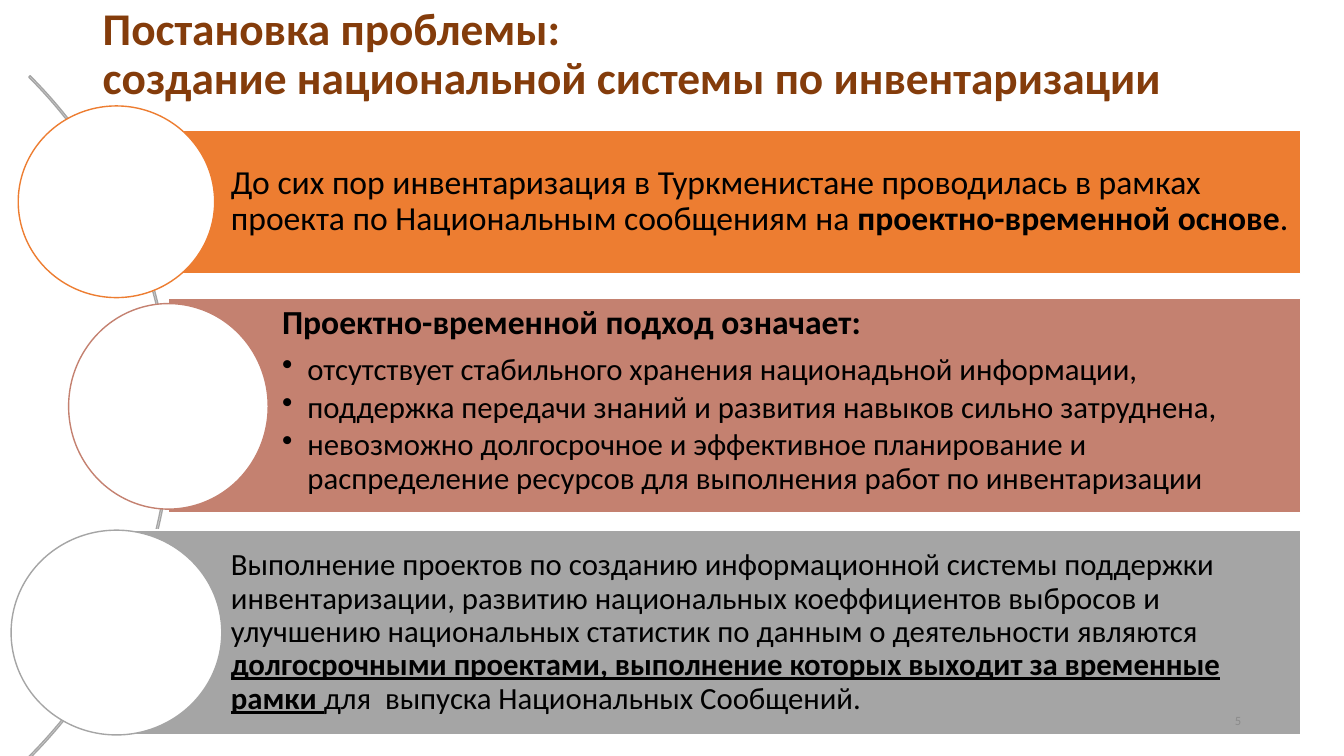
from dataclasses import dataclass

from lxml.etree import SubElement
from pptx import Presentation
from pptx.dml.color import RGBColor
from pptx.enum.shapes import MSO_SHAPE as Preset
from pptx.enum.text import MSO_ANCHOR as Anchor, PP_ALIGN as Align
from pptx.oxml.ns import qn
from pptx.util import Cm, Pt

COLORS = {
    "title": "843C0B",
    "orange": "ED7D31",
    "clay": "C48170",
    "gray": "A5A5A5",
    "number": "8B8B8B",
    "white": "FFFFFF",
    "black": "000000",
}
FONT = "Calibri"
BARS_RIGHT = 32.77
TEXT_INSET = 2.87
BULLET_INDENT = 0.64


@dataclass(frozen=True)
class Span:
    text: str
    bold: bool = False
    underline: bool = False


@dataclass(frozen=True)
class Para:
    spans: tuple[Span, ...]
    size: float
    after: float = 0.35
    bullet: bool = False


@dataclass(frozen=True)
class Box:
    left: float
    top: float
    width: float
    height: float

    def lengths(self) -> tuple[Cm, ...]:
        return Cm(self.left), Cm(self.top), Cm(self.width), Cm(self.height)


@dataclass(frozen=True)
class Row:
    color: str
    left: float
    top: float
    height: float
    circle: Box
    paras: tuple[Para, ...]
    inset: float = 0.18
    anchor: Anchor = Anchor.MIDDLE


def bullet(text: str) -> Para:
    return Para((Span(text),), 22, after=0.15, bullet=True)


ROWS = (
    Row("orange", 2.95, 3.28, 3.61, Box(0.46, 2.67, 4.95, 4.83), (
        Para((
            Span("До сих пор инвентаризация в Туркменистане проводилась в рамках "
                 "проекта по Национальным сообщениям на "),
            Span("проектно-временной основе", bold=True),
            Span("."),
        ), 24),
    )),
    Row("clay", 4.24, 7.52, 5.41, Box(1.73, 7.65, 5.03, 5.18), (
        Para((Span("Проектно-временной подход означает:", bold=True),), 24),
        bullet("отсутствует стабильного хранения национадьной информации,"),
        bullet("поддержка передачи знаний и развития навыков сильно затруднена,"),
        bullet("невозможно долгосрочное и эффективное планирование и "
               "распределение ресурсов для выполнения работ по инвентаризации"),
    ), anchor=Anchor.TOP),
    Row("gray", 2.95, 13.36, 5.16, Box(0.28, 13.36, 5.31, 5.16), (
        Para((
            Span("Выполнение проектов по созданию информационной системы поддержки "
                 "инвентаризации, развитию национальных коеффициентов выбросов и "
                 "улучшению национальных статистик по данным о деятельности являются "),
            Span("долгосрочными проектами, выполнение которых выходит за временные рамки ",
                 bold=True, underline=True),
            Span("для  выпуска Национальных Сообщений."),
        ), 22),
    ), inset=0.15),
)


def rgb(name: str) -> RGBColor:
    return RGBColor.from_string(COLORS[name])


def add_span(para, span: Span, size: float, color: str) -> None:
    run = para.add_run()
    run.text = span.text
    font = run.font
    font.name, font.size = FONT, Pt(size)
    font.bold, font.underline = span.bold, span.underline
    font.color.rgb = rgb(color)


def add_figure(page, preset: Preset, box: Box, fill: str | None, line: str):
    figure = page.shapes.add_shape(preset, *box.lengths())
    figure.shadow.inherit = False
    if fill:
        figure.fill.solid()
        figure.fill.fore_color.rgb = rgb(fill)
    else:
        figure.fill.background()
    figure.line.color.rgb = rgb(line)
    figure.line.width = Pt(1)
    return figure


def add_bullet(para) -> None:
    properties = para._p.get_or_add_pPr()
    properties.set("marL", str(Cm(BULLET_INDENT)))
    properties.set("indent", str(-Cm(BULLET_INDENT)))
    SubElement(properties, qn("a:buChar")).set("char", "•")


def fill_bar(frame, row: Row) -> None:
    frame.word_wrap = True
    frame.vertical_anchor = row.anchor
    frame.margin_left = Cm(TEXT_INSET)
    frame.margin_top = frame.margin_right = frame.margin_bottom = Cm(row.inset)
    for index, item in enumerate(row.paras):
        para = frame.add_paragraph() if index else frame.paragraphs[0]
        para.alignment = Align.LEFT
        para.line_spacing = 0.9
        para.space_after = Pt(item.size * item.after)
        if item.bullet:
            add_bullet(para)
        for span in item.spans:
            add_span(para, span, item.size, "black")


def add_row(page, row: Row) -> None:
    area = Box(row.left, row.top, BARS_RIGHT - row.left, row.height)
    bar = add_figure(page, Preset.RECTANGLE, area, row.color, "white")
    fill_bar(bar.text_frame, row)
    add_figure(page, Preset.OVAL, row.circle, "white", row.color)


def add_text_box(page, box: Box):
    frame = page.shapes.add_textbox(*box.lengths()).text_frame
    frame.word_wrap = True
    frame.vertical_anchor = Anchor.MIDDLE
    return frame.paragraphs[0]


def add_title(page) -> None:
    para = add_text_box(page, Box(2.34, -0.15, 29.21, 3.07))
    para.line_spacing = 0.9
    add_span(para, Span("Постановка проблемы: ", bold=True), 32.4, "title")
    para.add_line_break()
    add_span(para, Span("создание национальной системы по инвентаризации", bold=True),
             32.4, "title")


def add_arc(page) -> None:
    arc = add_figure(page, Preset.BLOCK_ARC, Box(-19.99, -1.65, 24.31, 24.31), None, "gray")
    for index, value in enumerate((189, 27, 0.002)):
        arc.adjustments[index] = value


def add_page_number(page) -> None:
    para = add_text_box(page, Box(29.5, 17.66, 2.03, 1.01))
    para.alignment = Align.RIGHT
    add_span(para, Span("5"), 9, "number")


def main() -> None:
    deck = Presentation()
    deck.slide_width, deck.slide_height = Cm(33.87), Cm(19.05)
    page = deck.slides.add_slide(deck.slide_layouts[6])
    add_title(page)
    add_arc(page)
    for row in ROWS:
        add_row(page, row)
    add_page_number(page)
    deck.save("out.pptx")


if __name__ == "__main__":
    main()
